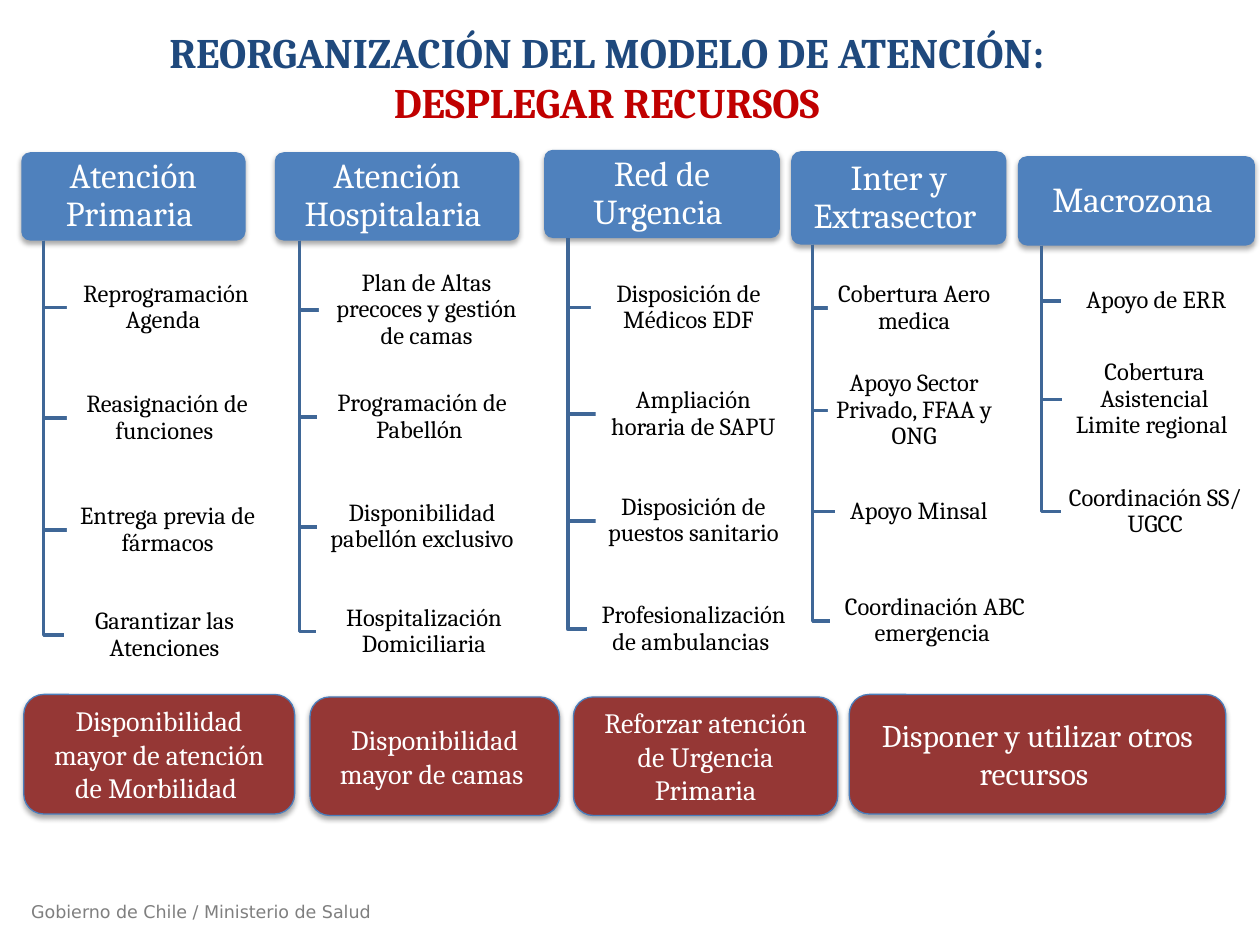
"""Build the slide on reorganising the care model and deploying resources."""
from lxml.etree import SubElement as Sub
from pptx import Presentation
from pptx.dml.color import RGBColor as Rgb
from pptx.enum.shapes import MSO_SHAPE as Form
from pptx.enum.text import MSO_ANCHOR as Anchor, MSO_AUTO_SIZE as Auto, PP_ALIGN as Align
from pptx.oxml.ns import qn
from pptx.util import Cm, Pt

THEME = {
    "font": "Cambria", "sans": "DejaVu Sans",
    "navy": "1F497D", "crimson": "C00000", "head": "4F81BD", "branch": "3F6797",
    "goal": "953735", "edge": "4B7EBC", "white": "FFFFFF", "black": "000000",
    "gray": "7F7F7F", "title": 24, "top": 20, "item": 14, "small": 10,
}

TITLE = [("REORGANIZACIÓN DEL MODELO DE ATENCIÓN:", THEME["navy"]),
         ("DESPLEGAR RECURSOS", THEME["crimson"])]
FOOT = "Gobierno de Chile / Ministerio de Salud"

COLUMNS = [
    ("Atención Primaria ", (0.43, 3.07, 4.52, 1.78), [
        ("Reprogramación Agenda ", (1.35, 5.31, 3.99, 1.78)),
        ("Reasignación de funciones ", (1.35, 7.54, 4.04, 1.78)),
        ("Entrega previa de fármacos", (1.35, 9.8, 4.06, 1.78)),
        ("Garantizar las Atenciones", (1.3, 11.91, 4.04, 1.78))]),
    ("Atención Hospitalaria ", (5.54, 3.07, 4.93, 1.78), [
        ("Plan de Altas precoces y gestión de camas", (6.43, 5.36, 4.34, 1.78)),
        ("Programación de Pabellón ", (6.4, 7.52, 4.22, 1.78)),
        ("Disponibilidad pabellón exclusivo", (6.4, 9.73, 4.22, 1.78)),
        ("Hospitalización Domiciliaria", (6.38, 11.84, 4.34, 1.78))]),
    ("Red de Urgencia ", (10.97, 3.02, 4.75, 1.78), [
        ("Disposición de Médicos EDF", (11.91, 5.36, 3.94, 1.68)),
        ("Ampliación horaria de SAPU", (12.01, 7.62, 3.94, 1.45)),
        ("Disposición de puestos sanitario", (12.01, 9.8, 3.94, 1.4)),
        ("Profesionalización de ambulancias ", (11.84, 11.81, 4.29, 1.75))]),
    ("Inter y Extrasector ", (15.95, 3.05, 4.34, 1.88), [
        ("Cobertura Aero medica", (16.69, 5.41, 3.48, 1.6)),
        ("Apoyo Sector Privado, FFAA y ONG", (16.69, 7.49, 3.48, 1.57)),
        ("Apoyo Minsal ", (16.84, 9.65, 3.48, 1.32)),
        ("Coordinación ABC emergencia ", (16.74, 11.79, 4.22, 1.45))]),
    ("Macrozona ", (20.52, 3.15, 4.78, 1.8), [
        ("Apoyo de ERR", (21.39, 5.41, 3.84, 1.32)),
        ("Cobertura Asistencial Limite regional ", (21.41, 7.29, 3.73, 1.52)),
        ("Coordinación SS/ UGCC", (21.39, 9.47, 3.8, 1.68))]),
]
GOALS = [
    ("Disponibilidad mayor de atención de Morbilidad ", (0.48, 14, 5.46, 2.41), 16),
    ("Disponibilidad mayor de camas ", (6.25, 14.05, 5.03, 2.39), 16),
    ("Reforzar atención de Urgencia Primaria", (11.56, 14.05, 5.33, 2.39), 16),
    ("Disponer y utilizar otros recursos ", (17.12, 14, 7.59, 2.41), 18),
]


def write(shape, parts, size, color=None, font=THEME["font"], bold=False,
          align=Align.CENTER, space=None, pad=(0.25, 0.13)):
    frame = shape.text_frame
    frame.auto_size, frame.word_wrap = Auto.NONE, True
    frame.vertical_anchor = Anchor.MIDDLE
    frame.margin_left = frame.margin_right = Cm(pad[0])
    frame.margin_top = frame.margin_bottom = Cm(pad[1])
    para = frame.paragraphs[0]
    para.alignment, para.line_spacing = align, space
    for i, (text, tint) in enumerate([(parts, color)] if isinstance(parts, str) else parts):
        if i:
            para.add_line_break()
        run = para.add_run()
        run.text = text
        run.font.size, run.font.name, run.font.bold = Pt(size), font, bold
        run.font.color.rgb = Rgb.from_string(tint)


def shade(shape):
    glow = shape._element.spPr.find(qn("a:effectLst"))
    cast = Sub(glow, qn("a:outerShdw"), blurRad=str(Pt(3.1)), dist=str(Pt(1.8)),
               dir="5400000", algn="ctr", rotWithShape="0")
    Sub(Sub(cast, qn("a:srgbClr"), val=THEME["black"]), qn("a:alpha"), val="35000")


def block(slide, box, fill, edge=None, round=None, alpha=None, cast=False):
    shape = slide.shapes.add_shape(Form.ROUNDED_RECTANGLE, *map(Cm, box))
    shape.shadow.inherit = False
    shape.fill.solid()
    shape.fill.fore_color.rgb = Rgb.from_string(fill)
    if edge:
        shape.line.color.rgb, shape.line.width = Rgb.from_string(edge), Pt(0.75)
    else:
        shape.line.fill.background()
    if round:
        shape.adjustments[0] = round
    if alpha:
        tint = shape._element.spPr.find(qn("a:solidFill"))[0]
        Sub(tint, qn("a:alpha"), val=str(alpha * 1000))
    if cast:
        shade(shape)
    return shape


def elbow(slide, x, top, end, low):
    pen = slide.shapes.build_freeform(Cm(x), Cm(top))
    pen.add_line_segments([(Cm(x), Cm(low)), (Cm(end), Cm(low))], close=False)
    shape = pen.convert_to_shape()
    shape.shadow.inherit = False
    shape.fill.background()
    shape.line.color.rgb, shape.line.width = Rgb.from_string(THEME["branch"]), Pt(2)


def column(slide, name, box, items):
    x, y, w, h = box
    head = block(slide, box, THEME["head"], round=0.1, cast=True)
    write(head, name, THEME["top"], THEME["white"], space=0.9, pad=(0.1, 0.08))
    for text, spot in items:
        elbow(slide, x + w / 10, y + h, spot[0], spot[1] + spot[3] / 2)
        item = block(slide, spot, THEME["white"], round=0.1, alpha=90)
        write(item, text, THEME["item"], THEME["black"], space=0.9, pad=(0.05, 0.05))


def main():
    deck = Presentation()
    deck.slide_width, deck.slide_height = Cm(25.4), Cm(19.05)
    slide = deck.slides.add_slide(deck.slide_layouts[5])
    title = slide.shapes.title
    title.left, title.top, title.width, title.height = map(Cm, (0.89, 0.41, 22.68, 2.26))
    write(title, TITLE, THEME["title"], bold=True)
    foot = slide.shapes.add_textbox(*map(Cm, (0.38, 18.03, 7.67, 0.69)))
    write(foot, FOOT, THEME["small"], THEME["gray"], font=THEME["sans"], align=Align.LEFT)
    for name, box, items in COLUMNS:
        column(slide, name, box, items)
    for text, box, size in GOALS:
        goal = block(slide, box, THEME["goal"], THEME["edge"], cast=True)
        write(goal, text, size, THEME["white"])
    deck.save("out.pptx")


if __name__ == "__main__":
    main()
